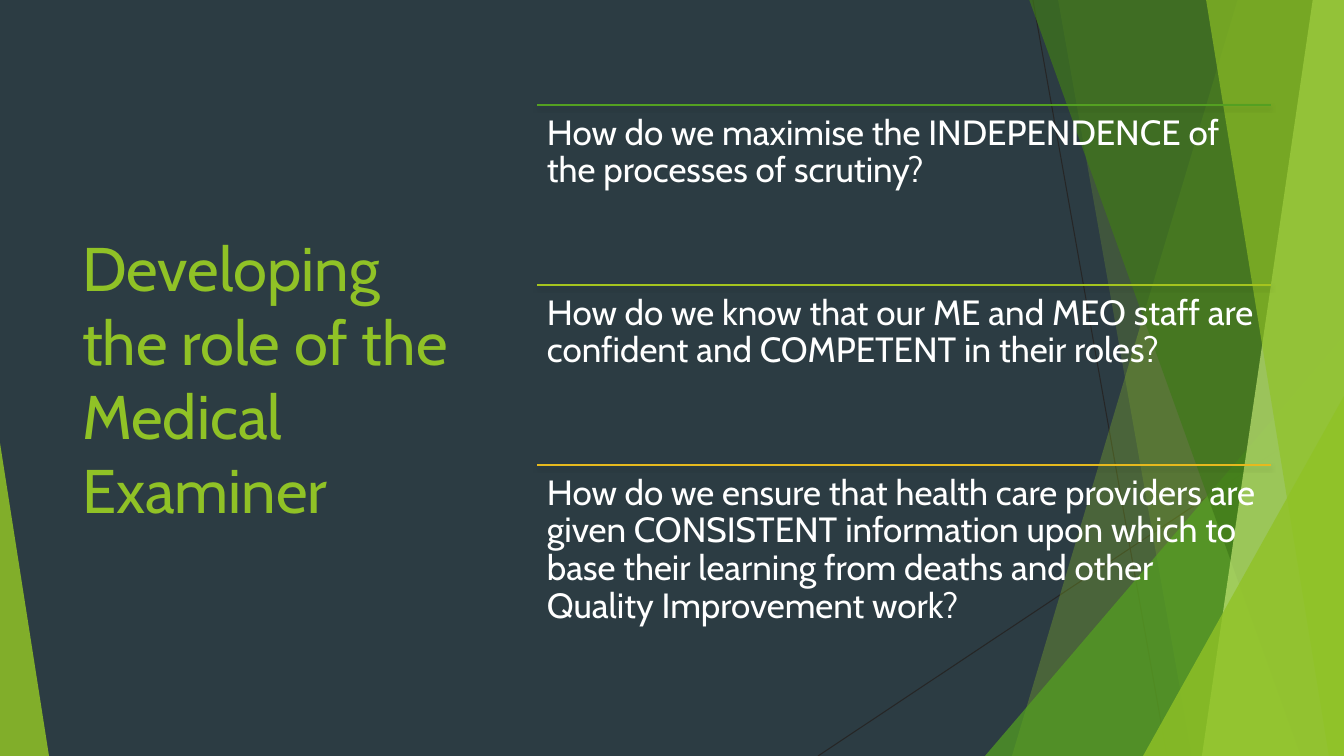
from lxml import etree
from pptx import Presentation
from pptx.dml.color import RGBColor
from pptx.enum.shapes import MSO_CONNECTOR as CONN, MSO_SHAPE as SHAPE
from pptx.enum.text import MSO_ANCHOR as ANCHOR, MSO_AUTO_SIZE as AUTOSIZE, PP_ALIGN as ALIGN
from pptx.oxml import parse_xml
from pptx.oxml.ns import nsdecls, qn
from pptx.util import Emu, Pt

PX_PER_INCH = 100.8
WIDTH, HEIGHT = 1344, 756


def px(n):
    return Emu(round(n * 914400 / PX_PER_INCH))


def rgb(color):
    return RGBColor.from_string(color)


class Deck:
    font = "Cabin"
    background = "2C3C43"
    green = "90C226"
    white = "FFFFFF"

    def __init__(self):
        self.prs = Presentation()
        self.prs.slide_width, self.prs.slide_height = px(WIDTH), px(HEIGHT)
        self.s = self.prs.slides.add_slide(self.prs.slide_layouts[5])
        fill = self.s.background.fill
        fill.solid()
        fill.fore_color.rgb = rgb(self.background)

    def paint(self, sp, color, opacity):
        sp.shadow.inherit = False
        sp.line.fill.background()
        sp.fill.solid()
        sp.fill.fore_color.rgb = rgb(color)
        clr = sp._element.spPr.find(qn("a:solidFill"))[0]
        etree.SubElement(clr, qn("a:alpha"), val=str(opacity * 1000))

    def facet(self, top_x, bottom_x, color, opacity):
        """Sheet from a slanted left edge to the right side of the slide."""
        fb = self.s.shapes.build_freeform(top_x, -1, scale=px(1))
        fb.add_line_segments([(WIDTH, -1), (WIDTH, HEIGHT), (bottom_x, HEIGHT)])
        self.paint(fb.convert_to_shape(), color, opacity)

    def triangle(self, x, y, w, h, apex, color, opacity):
        sp = self.s.shapes.add_shape(SHAPE.ISOSCELES_TRIANGLE, px(x), px(y), px(w), px(h))
        sp.adjustments[0] = apex
        self.paint(sp, color, opacity)

    def line(self, x1, y1, x2, y2, color, weight, shadow=False):
        c = self.s.shapes.add_connector(CONN.STRAIGHT, px(x1), px(y1), px(x2), px(y2))
        c.line.color.rgb = rgb(color)
        c.line.width = Pt(weight)
        effects = parse_xml(f'<a:effectLst {nsdecls("a")}/>')
        if shadow:
            effects.append(parse_xml(
                f'<a:outerShdw {nsdecls("a")} blurRad="{Pt(3)}" dist="{Pt(2)}" '
                'dir="5400000" rotWithShape="0"><a:srgbClr val="000000">'
                '<a:alpha val="35000"/></a:srgbClr></a:outerShdw>'))
        c._element.spPr.append(effects)

    def add_words(self, tf, text, size, color):
        tf.word_wrap = True
        tf.auto_size = AUTOSIZE.NONE
        p = tf.paragraphs[0]
        p.alignment = ALIGN.LEFT
        r = p.add_run()
        r.text = text
        r.font.name, r.font.size = self.font, Pt(size)
        r.font.color.rgb = rgb(color)
        return p

    def title(self, x, y, w, h, text):
        sp = self.s.shapes.title
        sp.left, sp.top, sp.width, sp.height = px(x), px(y), px(w), px(h)
        sp.text_frame.vertical_anchor = ANCHOR.MIDDLE
        self.add_words(sp.text_frame, text, 44, self.green)

    def text(self, x, y, w, h, text):
        tf = self.s.shapes.add_textbox(px(x), px(y), px(w), px(h)).text_frame
        tf.margin_left = tf.margin_right = tf.margin_top = tf.margin_bottom = px(10)
        tf.vertical_anchor = ANCHOR.TOP
        self.add_words(tf, text, 25, self.white).line_spacing = 0.9


def main():
    deck = Deck()

    # Background facets, back to front
    deck.line(1033, 0, 1167, HEIGHT, "262626", 0.75)
    deck.line(WIDTH, 406, 818, HEIGHT, "262626", 0.75)
    deck.facet(1238, 1012, deck.green, 30)
    deck.facet(1058, 1192, deck.green, 20)
    deck.triangle(985, 336, 359, 420, 1, "54A021", 72)
    deck.facet(1029, 1301, "3F7819", 70)
    deck.facet(1313, 1202, "C0E474", 70)
    deck.facet(1206, 1329, deck.green, 65)
    deck.triangle(1143, 396, 201, 360, 1, deck.green, 80)
    deck.triangle(0, 443, 49, 313, 0, deck.green, 85)

    # Title
    deck.title(72, 152, 391, 452, "Developing the role of the Medical Examiner")

    # Questions, each under its own rule
    questions = [
        ("54A021", "How do we maximise the INDEPENDENCE of the processes of scrutiny?"),
        ("A5C41F", "How do we know that our ME and MEO staff are confident and "
                   "COMPETENT in their roles?"),
        ("E6B91E", "How do we ensure that health care providers are given CONSISTENT "
                   "information upon which to base their learning from deaths and other "
                   "Quality Improvement work?"),
    ]
    left, top, width, row = 537, 105, 734, 180
    for i, (color, question) in enumerate(questions):
        y = top + i * row
        deck.line(left, y, left + width, y, color, 1, shadow=True)
        deck.text(left, y, width, row, question)

    deck.prs.save("out.pptx")


if __name__ == "__main__":
    main()
